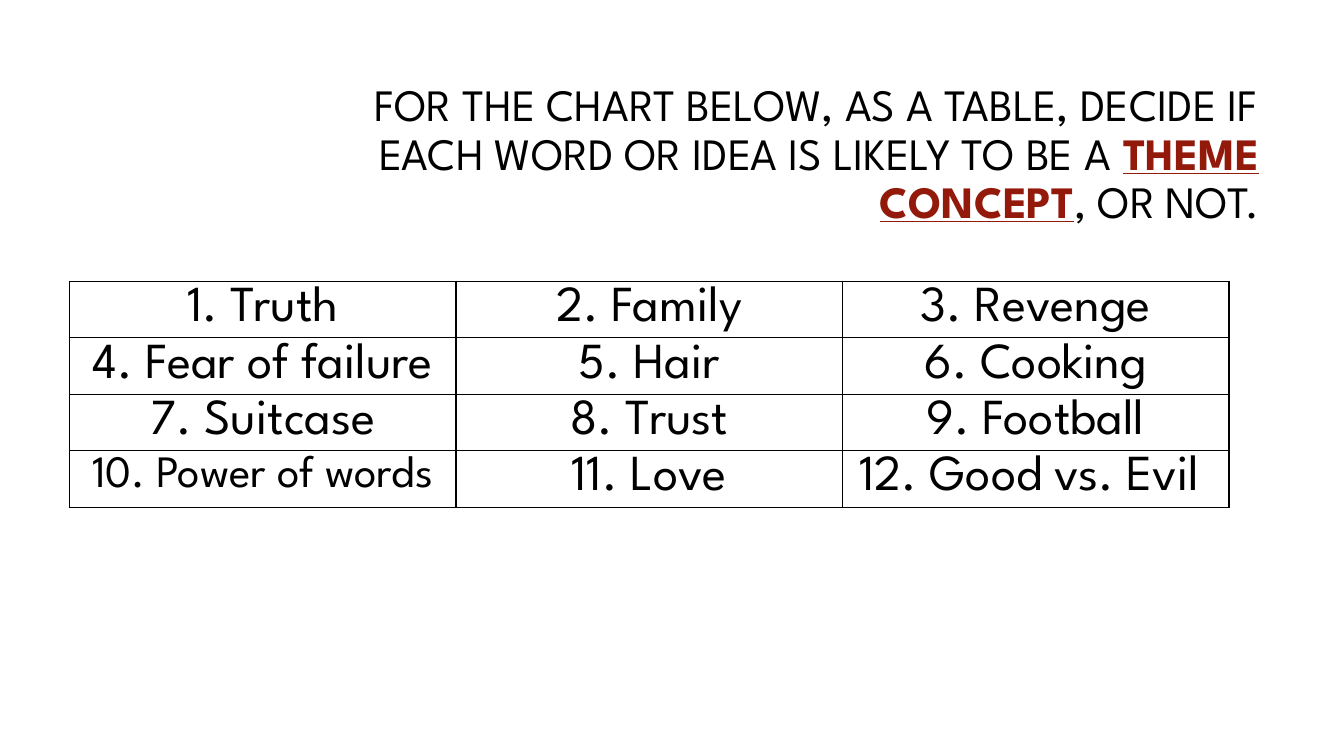
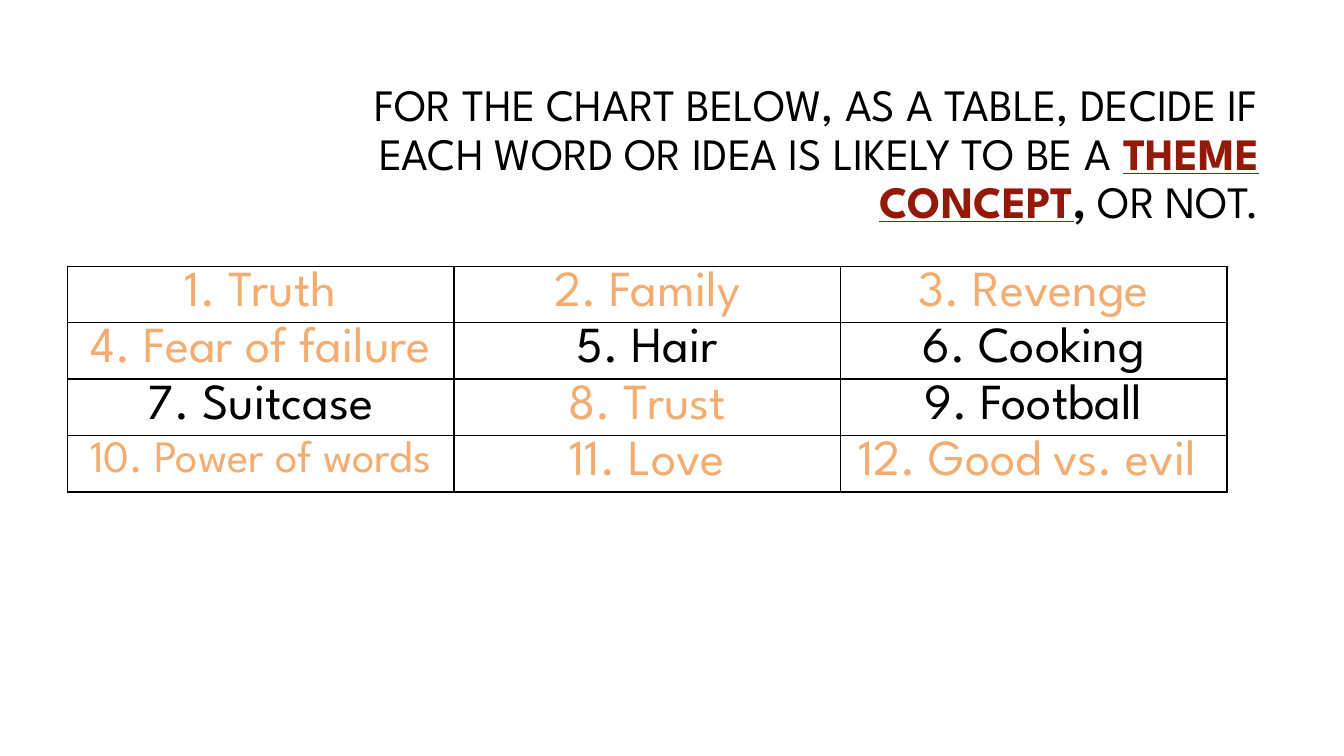
from pptx import Presentation
from pptx.dml.color import RGBColor
from pptx.enum.text import MSO_ANCHOR, MSO_AUTO_SIZE, PP_ALIGN
from pptx.oxml import parse_xml
from pptx.oxml.ns import nsdecls
from pptx.util import Inches, Pt

RIGHT, CENTER = PP_ALIGN.RIGHT, PP_ALIGN.CENTER
MIDDLE, TOP = MSO_ANCHOR.MIDDLE, MSO_ANCHOR.TOP
FIXED = MSO_AUTO_SIZE.NONE

BLACK = RGBColor(0x00, 0x00, 0x00)
RED = RGBColor(0x93, 0x19, 0x0A)
PEACH = RGBColor(0xF4, 0xAD, 0x70)
FONT = "League Spartan"

ASK = "FOR THE CHART BELOW, AS A TABLE, DECIDE IF EACH WORD OR IDEA IS LIKELY TO BE A "
KEY = "THEME CONCEPT"
WORDS = [
    "Truth", "Family", "Revenge",
    "Fear of failure", "Hair", "Cooking",
    "Suitcase", "Trust", "Football",
    "Power of words", "Love",
]
SMALL = "Power of words"
THEMES = {"Truth", "Family", "Revenge", "Fear of failure", "Trust",
          "Power of words", "Love", "Good vs. evil "}

SLIDES = [
    {"last": "Good vs. Evil ", "themes": set(), "comma": False, "left": 0.69, "top": 2.79},
    {"last": "Good vs. evil ", "themes": THEMES, "comma": True, "left": 0.67, "top": 2.64},
]
COLS, ROWS = 3, 4
WIDTH, HEIGHT = 11.5, 0.41 * ROWS


def write(para, text, size=36, color=BLACK, bold=False, line=False):
    run = para.add_run()
    run.text = text
    font = run.font
    font.name, font.size = FONT, Pt(size)
    font.bold, font.underline = bold, line
    font.color.rgb = color


def border(cell):
    props = cell._tc.get_or_add_tcPr()
    for spot, side in enumerate(("lnL", "lnR", "lnT", "lnB")):
        props.insert(spot, parse_xml(
            f'<a:{side} {nsdecls("a")} w="{Pt(1)}"><a:solidFill>'
            f'<a:srgbClr val="{BLACK}"/></a:solidFill></a:{side}>'))


def add_title(slide, comma):
    title = slide.shapes.title
    title.left, title.top = Inches(3.17), Inches(0.84)
    title.width, title.height = Inches(9.42), Inches(1.41)
    frame = title.text_frame
    frame.word_wrap, frame.auto_size = True, FIXED
    frame.vertical_anchor = MIDDLE
    para = frame.paragraphs[0]
    para.alignment, para.line_spacing = RIGHT, 0.9
    write(para, ASK, size=32)
    write(para, KEY, size=32, color=RED, bold=True, line=True)
    write(para, ",", size=32, bold=comma)
    write(para, " OR NOT.", size=32)


def add_grid(slide, words, themes, left, top):
    table = slide.shapes.add_table(ROWS, COLS, Inches(left), Inches(top),
                                   Inches(WIDTH), Inches(HEIGHT)).table
    table.first_row = table.horz_banding = False
    for spot, word in enumerate(words):
        cell = table.cell(*divmod(spot, COLS))
        cell.fill.background()
        cell.vertical_anchor = TOP
        border(cell)
        para = cell.text_frame.paragraphs[0]
        para.alignment = CENTER
        write(para, f"{spot + 1}. {word}", size=32 if word == SMALL else 36,
              color=PEACH if word in themes else BLACK)


def main():
    deck = Presentation()
    deck.slide_width, deck.slide_height = Inches(13.33), Inches(7.5)
    for item in SLIDES:
        slide = deck.slides.add_slide(deck.slide_layouts[5])
        add_title(slide, item["comma"])
        add_grid(slide, WORDS + [item["last"]], item["themes"], item["left"], item["top"])
    deck.save("out.pptx")


if __name__ == "__main__":
    main()
